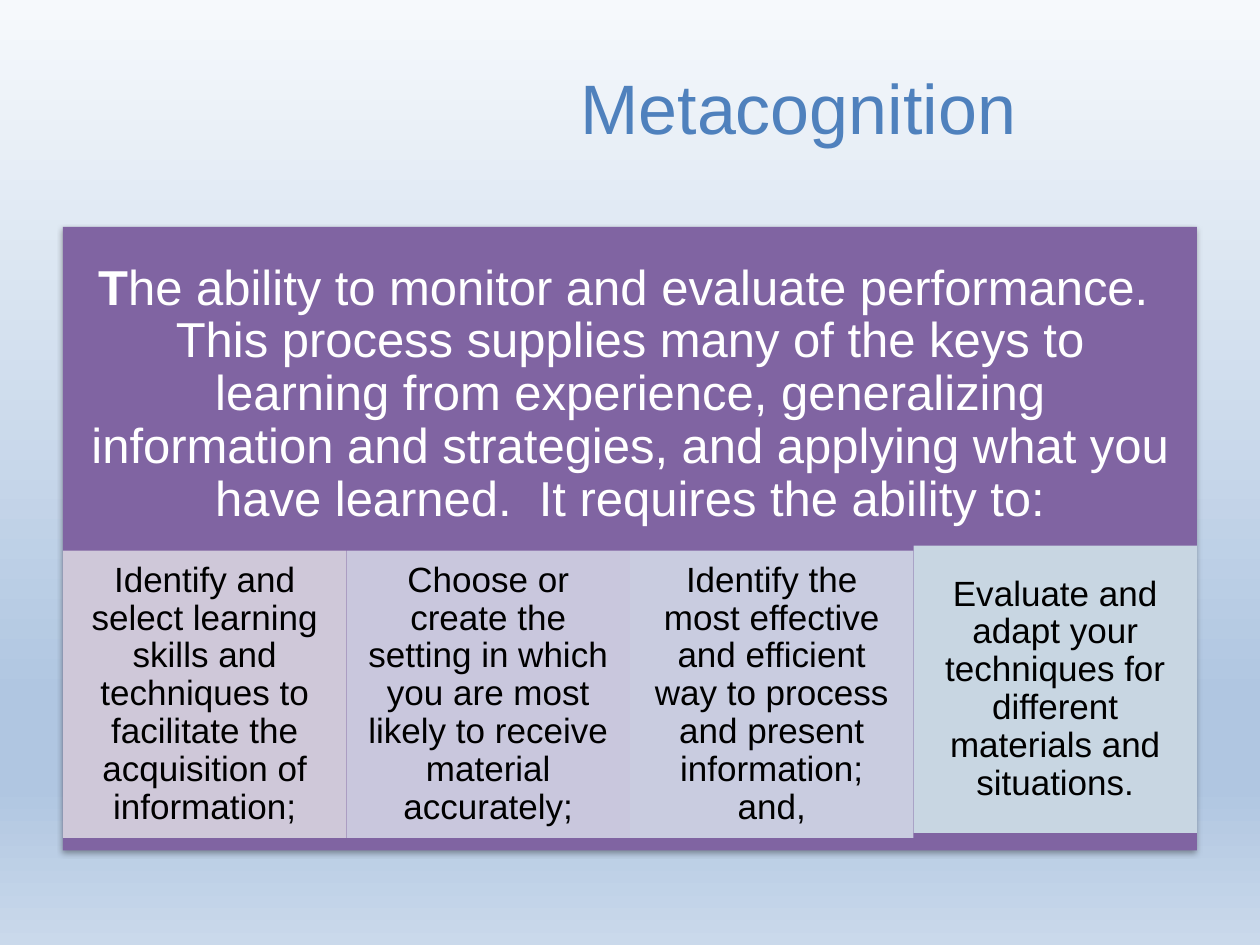
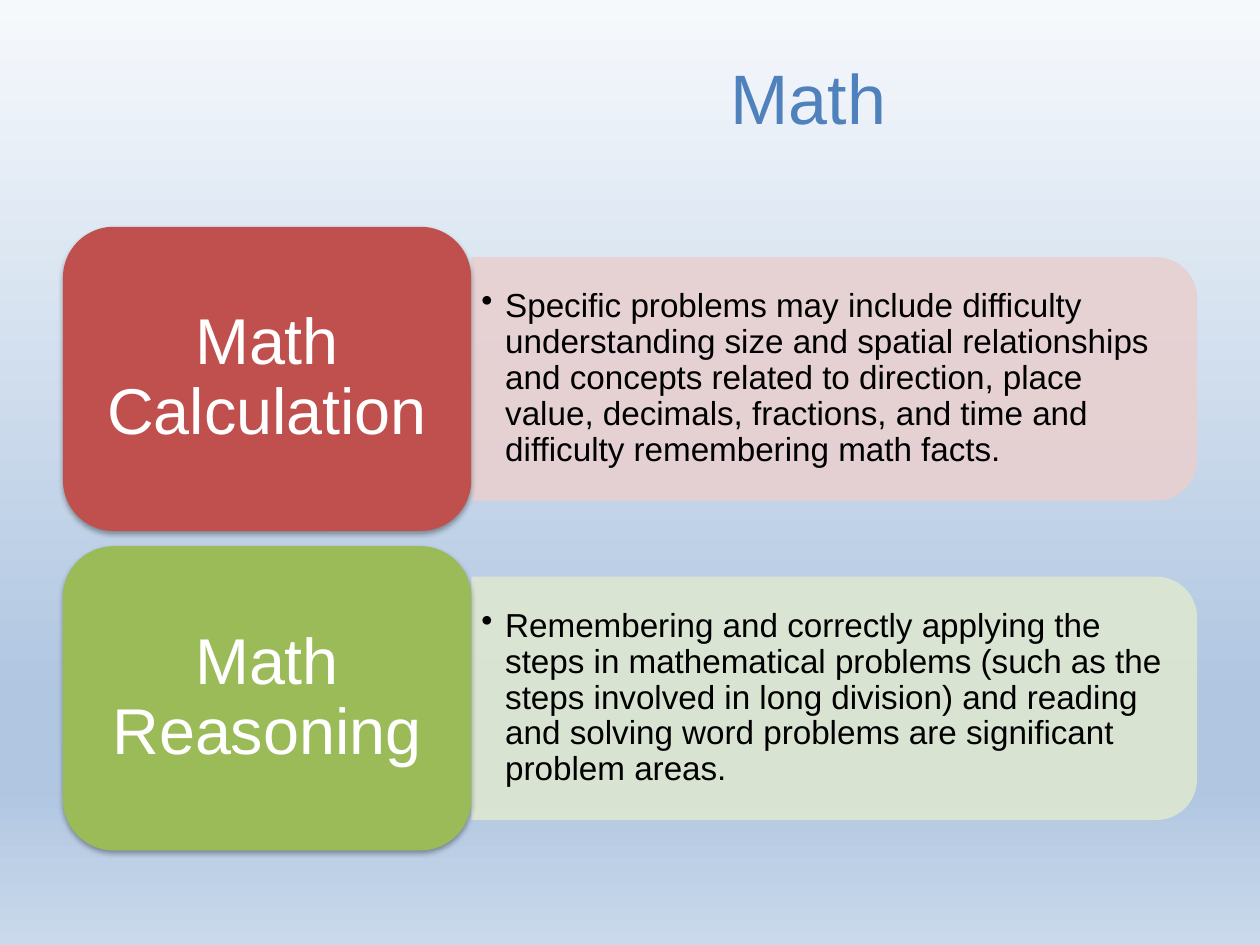
from pptx import Presentation
from pptx.dml.color import RGBColor
from pptx.enum.shapes import MSO_SHAPE as Preset
from pptx.enum.text import MSO_ANCHOR as Anchor, PP_ALIGN as Align
from pptx.oxml.ns import qn
from pptx.util import Inches, Pt
from lxml.etree import SubElement

COLORS = {
    "title": "4F81BD", "white": "FFFFFF", "black": "000000",
    "purple": "8064A2", "red": "C0504D", "green": "9BBB59",
    "pale_red": "E8D0D0", "pale_green": "DEE7D1",
    "lilac": "D8D3E0", "lavender": "D2D2E4", "periwinkle": "D1D8E7", "aqua": "D0E3EA",
}
BACKGROUND = [(0, "F6F9FC"), (74, "B0C6E1"), (83, "B0C6E1"), (100, "CAD9EB")]
FONT = "Arial"
CONTENT = (0.5, 1.8, 9, 4.95)

DEFINITION = [
    ("T", True),
    ("he ability to monitor and evaluate performance.  This process supplies many of the keys "
     "to learning from experience, generalizing information and strategies, and applying what "
     "you have learned.  It requires the ability to:", False),
]
ABILITIES = [
    ("lilac", "Identify and select learning skills and techniques to facilitate the "
              "acquisition of information;"),
    ("lavender", "Choose or create the setting in which you are most likely to receive "
                 "material accurately;"),
    ("periwinkle", "Identify the most effective and efficient way to process and present "
                   "information; and,"),
    ("aqua", "Evaluate and adapt your techniques for different materials and situations."),
]
MATH_AREAS = [
    ("Math Calculation", "red", "pale_red",
     "Specific problems may include difficulty understanding size and spatial relationships "
     "and concepts related to direction, place value, decimals, fractions, and time and "
     "difficulty remembering math facts."),
    ("Math Reasoning", "green", "pale_green",
     "Remembering and correctly applying the steps in mathematical problems (such as the steps "
     "involved in long division) and reading and solving word problems are significant "
     "problem areas."),
]


def inches(box):
    """Turn a box of numbers into lengths."""
    return [Inches(value) for value in box]


def write_text(shape, spans, size, color, insets=(0.1, 0.05), align=Align.CENTER,
               line_spacing=0.9, bullet_indent=None):
    """Write one paragraph of (text, bold) spans in a shape."""
    frame = shape.text_frame
    frame.word_wrap = True
    frame.vertical_anchor = Anchor.MIDDLE
    frame.margin_left = frame.margin_right = Inches(insets[0])
    frame.margin_top = frame.margin_bottom = Inches(insets[1])
    para = frame.paragraphs[0]
    para.alignment = align
    para.line_spacing = line_spacing
    if bullet_indent:
        properties = para._p.get_or_add_pPr()
        properties.set("marL", str(Inches(bullet_indent)))
        properties.set("indent", str(-Inches(bullet_indent)))
        SubElement(properties, qn("a:buChar"), char="•")
    for text, bold in spans:
        span = para.add_run()
        span.text = text
        span.font.name = FONT
        span.font.size = Pt(size)
        span.font.bold = bold
        span.font.color.rgb = RGBColor.from_string(COLORS[color])


def add_block(page, preset, box, color, opacity=100, shadow=False):
    """Add a borderless filled shape, optionally translucent or with a soft shadow."""
    shape = page.shapes.add_shape(preset, *inches(box))
    shape.fill.solid()
    shape.fill.fore_color.rgb = RGBColor.from_string(COLORS[color])
    shape.line.fill.background()
    shape.shadow.inherit = False
    properties = shape.element.spPr
    if opacity < 100:
        tint = properties.find(qn("a:solidFill")).find(qn("a:srgbClr"))
        SubElement(tint, qn("a:alpha"), val=str(opacity * 1000))
    if shadow:
        effect = SubElement(properties.find(qn("a:effectLst")), qn("a:outerShdw"),
                            blurRad=str(Pt(3.1)), dist=str(Pt(1.8)), dir="5400000",
                            rotWithShape="0")
        tint = SubElement(effect, qn("a:srgbClr"), val=COLORS["black"])
        SubElement(tint, qn("a:alpha"), val="35000")
    return shape


def set_background(master):
    """Give every page the vertical blue gradient."""
    fill = master.background.fill
    fill.gradient()
    fill.gradient_angle = 270
    stops = master.element.cSld.find(".//" + qn("a:gsLst"))
    for stop in list(stops):
        stops.remove(stop)
    for position, color in BACKGROUND:
        stop = SubElement(stops, qn("a:gs"), pos=str(position * 1000))
        SubElement(stop, qn("a:srgbClr"), val=color)


def add_page(deck, title, left, top):
    """Add a title-only page with its title placed."""
    page = deck.slides.add_slide(deck.slide_layouts[5])
    heading = page.shapes.title
    heading.left, heading.top, heading.width, heading.height = inches((left, top, 6.67, 1.03))
    write_text(heading, [(title, False)], 40, "title", line_spacing=1)
    return page


def add_definition_panel(page, box):
    """Place the definition above a row of ability cards."""
    left, top, width, height = box
    add_block(page, Preset.RECTANGLE, box, "purple", shadow=True)
    definition = page.shapes.add_textbox(*inches((left, top, width, 2.67)))
    write_text(definition, DEFINITION, 28, "white", insets=(0.22, 0.22))
    card_width = width / len(ABILITIES)
    for index, (color, text) in enumerate(ABILITIES):
        offset = 2.53 if index == len(ABILITIES) - 1 else 2.57
        card_box = (left + index * card_width, top + offset, card_width, 2.28)
        card = add_block(page, Preset.RECTANGLE, card_box, color, opacity=90)
        write_text(card, [(text, False)], 20, "black", insets=(0.16, 0.03))


def add_math_row(page, box, name, color, pale, details):
    """Place a named block with its details in a strip on the right."""
    left, top, width, height = box
    name_width = 0.36 * width
    strip_left, strip_width = left + name_width, width - name_width
    strip_height = 0.8 * height
    middle = top + height / 2
    upright = (strip_left + (strip_width - strip_height) / 2, middle - strip_width / 2,
               strip_height, strip_width)
    strip = add_block(page, Preset.ROUND_2_SAME_RECTANGLE, upright, pale, opacity=90)
    strip.rotation = 90
    label = page.shapes.add_textbox(
        *inches((strip_left, middle - 0.87, strip_width - 0.09, 1.74)))
    write_text(label, [(details, False)], 19, "black", insets=(0.08, 0.04),
               align=Align.LEFT, bullet_indent=0.19)
    block = add_block(page, Preset.ROUNDED_RECTANGLE, (left, top, name_width, height), color,
                      shadow=True)
    write_text(block, [(name, False)], 37, "white", insets=(0.15, 0.08))


def add_math_rows(page, box):
    """Stack the math areas evenly in the box."""
    left, top, width, height = box
    gap = 0.12
    row_height = (height - gap * (len(MATH_AREAS) - 1)) / len(MATH_AREAS)
    for index, area in enumerate(MATH_AREAS):
        row_top = top + index * (row_height + gap)
        add_math_row(page, (left, row_top, width, row_height), *area)


def main():
    """Build and save the deck."""
    deck = Presentation()
    deck.slide_width, deck.slide_height = Inches(10), Inches(7.5)
    set_background(deck.slide_master)
    add_definition_panel(add_page(deck, "Metacognition", 3, 0.33), CONTENT)
    add_math_rows(add_page(deck, "Math", 3.08, 0.25), CONTENT)
    deck.save("out.pptx")


if __name__ == "__main__":
    main()
